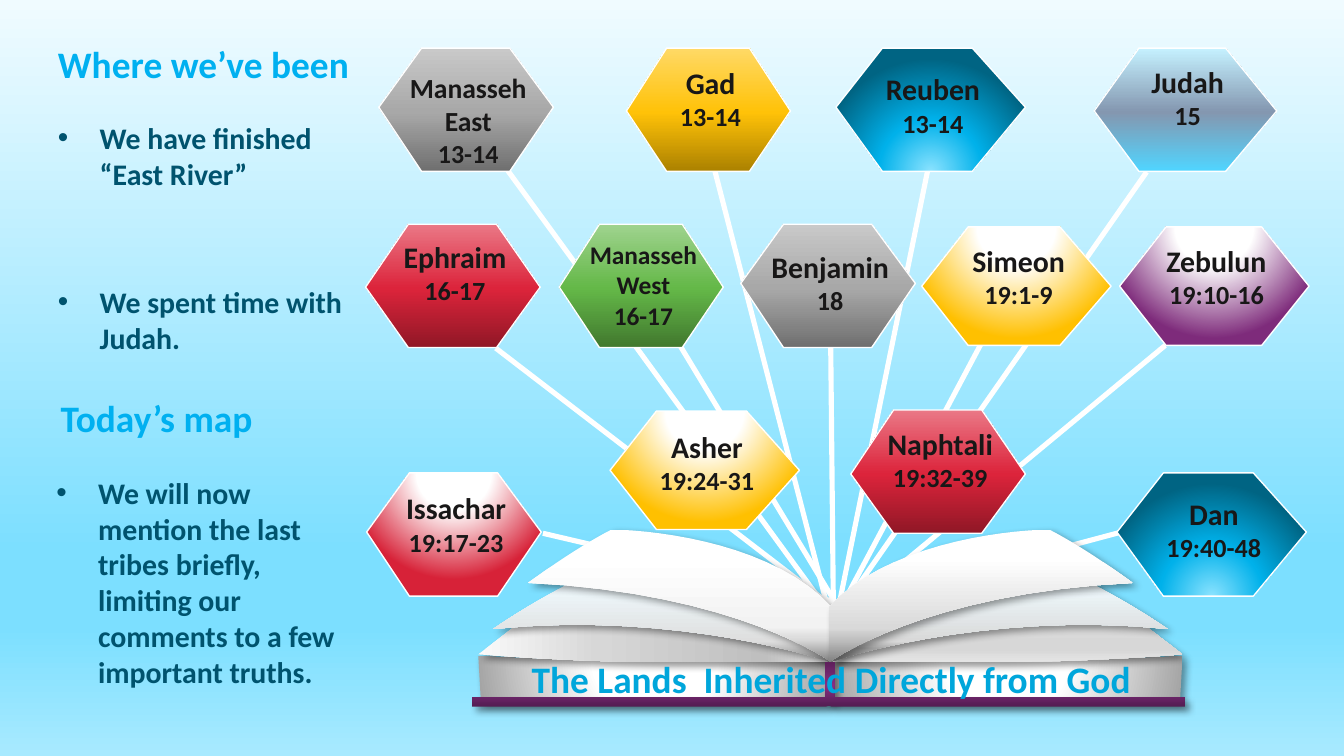
from pptx import Presentation
from pptx.dml.color import RGBColor
from pptx.enum.shapes import MSO_CONNECTOR
from pptx.enum.text import MSO_ANCHOR, MSO_AUTO_SIZE, PP_ALIGN
from pptx.oxml import parse_xml
from pptx.oxml.ns import nsdecls, qn
from pptx.util import Cm, Pt

STRAIGHT = MSO_CONNECTOR.STRAIGHT
TOP, MIDDLE = MSO_ANCHOR.TOP, MSO_ANCHOR.MIDDLE
NO_AUTOFIT = MSO_AUTO_SIZE.NONE
LEFT, CENTER = PP_ALIGN.LEFT, PP_ALIGN.CENTER
color = RGBColor.from_string
FONT = "Calibri"
BOTTOM_GLOW = (50, 130, 50, -30)
TOP_GLOW = (50, -80, 50, 180)

presentation = Presentation()
presentation.slide_width, presentation.slide_height = Cm(25.4), Cm(14.29)
slide = presentation.slides.add_slide(presentation.slide_layouts[4])


def set_gradient(fill, stops, direction):
    """Direction is an angle in degrees or the focus rectangle of a circle."""
    stop_xml = "".join(
        f'<a:gs pos="{position * 1000}"><a:srgbClr val="{value}"/></a:gs>' for position, value in stops)
    if isinstance(direction, tuple):
        sides = " ".join(f'{side}="{value * 1000}"' for side, value in zip("ltrb", direction))
        direction_xml = f'<a:path path="circle"><a:fillToRect {sides}/></a:path>'
    else:
        direction_xml = f'<a:lin ang="{direction * 60000}" scaled="0"/>'
    fill.gradient()
    gradient = fill._xPr.find(qn("a:gradFill"))
    gradient.getparent().replace(gradient, parse_xml(
        f'<a:gradFill {nsdecls("a")} rotWithShape="1"><a:gsLst>{stop_xml}</a:gsLst>'
        f'{direction_xml}</a:gradFill>'))


def add_outline(outline, stops, direction):
    """Outline holds points (x, y) and cubic curves (x1, y1, x2, y2, x, y) in cm."""
    points = [outline[0]]
    for part in outline[1:]:
        if len(part) == 2:
            points.append(part)
            continue
        controls = [points[-1], part[:2], part[2:4], part[4:]]
        for step in range(1, 17):
            t = step / 16
            weights = ((1 - t) ** 3, 3 * t * (1 - t) ** 2, 3 * t * t * (1 - t), t ** 3)
            points.append(tuple(sum(w * c[axis] for w, c in zip(weights, controls)) for axis in (0, 1)))
    points = [(Cm(x), Cm(y)) for x, y in points]
    builder = slide.shapes.build_freeform(*points[0])
    builder.add_line_segments(points[1:], close=True)
    shape = builder.convert_to_shape()
    shape.shadow.inherit = False
    set_gradient(shape.fill, stops, direction)
    return shape


# Background
set_gradient(slide.background.fill,
             [(0, "F0FBFF"), (73, "7CDFFF"), (83, "7CDFFF"), (100, "A8EAFF")], 90)

# Headings and lists: placeholder, text, box, is a list
side_texts = [
    (0, "Where we’ve been", (0.84, 0.64, 6.91, 1.12), False),
    (1, "Today’s map", (0.89, 7.34, 5.03, 1.12), False),
    (2, "We have finished “East River”", (0.84, 2.13, 5.89, 2.79), True),
    (3, "We spent time with Judah.", (0.84, 5.23, 5.89, 3.2), True),
    (4, "We will now mention the last tribes briefly, limiting our comments to a few "
        "important truths.", (0.81, 8.84, 5.89, 3.2), True),
]
for index, text, box, is_list in side_texts:
    shape = slide.placeholders[index]
    shape.left, shape.top, shape.width, shape.height = map(Cm, box)
    frame = shape.text_frame
    frame.text = text
    frame.word_wrap = True
    frame.auto_size = NO_AUTOFIT
    frame.vertical_anchor = TOP if is_list else MIDDLE
    paragraph = frame.paragraphs[0]
    if is_list:
        properties = paragraph._p.get_or_add_pPr()
        properties.set("marL", str(Cm(0.79)))
        properties.set("indent", str(-Cm(0.79)))
        properties.append(parse_xml(f'<a:buFont {nsdecls("a")} typeface="Arial"/>'))
        properties.append(parse_xml(f'<a:buChar {nsdecls("a")} char="•"/>'))
    paragraph.alignment = LEFT
    paragraph.space_before = Pt(0)
    paragraph.line_spacing = 1.0
    font = paragraph.runs[0].font
    font.name, font.size, font.bold = FONT, Pt(16 if is_list else 20), True
    font.color.rgb = color("00536E" if is_list else "00B0F0")

# Rays from the book to the tribes
rays = [
    (15.82, 11.53, 9.37, 6.58), (15.77, 11.71, 18.54, 6.5), (15.75, 11.33, 12.85, 6.53),
    (15.75, 11.53, 15.7, 6.58), (15.7, 11.71, 13.51, 3.23), (15.77, 11.71, 22.02, 6.53),
    (15.77, 11.71, 21.67, 3.25), (15.8, 11.71, 17.53, 3.23), (15.77, 11.71, 9.6, 3.23),
    (15.75, 11.51, 21.18, 10.06), (15.82, 11.38, 10.26, 10.08),
]
for ray in rays:
    connector = slide.shapes.add_connector(STRAIGHT, *map(Cm, ray))
    connector.line.color.rgb = color("FFFFFF")
    connector.line.width = Pt(2.75)
    connector._element.spPr.append(parse_xml(f'<a:effectLst {nsdecls("a")}/>'))

# Tribe hexagons
GOLD = [(0, "AB8100"), (48, "FFC208"), (100, "FFD966")], 270
BLUE = [(0, "8BE3FF"), (46, "00B1EA"), (100, "006483")], BOTTOM_GLOW
GRAY = [(0, "6F6F6F"), (48, "A8A8A8"), (100, "C9C9C9")], 270
SKY = [(0, "50D5FF"), (48, "8497B0"), (100, "C5F1FF")], 270
GREEN = [(0, "41782E"), (48, "64B848"), (100, "9FD38E")], 270
RED = [(0, "901726"), (48, "DC243B"), (100, "EA7886")], 270
WHITE_RED, WHITE_GOLD, WHITE_PURPLE = [
    ([(0, "FFFFFF"), (35, "FFFFFF"), (100, edge)], TOP_GLOW) for edge in ("D72238", "FFC000", "7E2B7B")]

# Lines, left, top, width, height, right shoulder, tip height, text top, gradient, sizes
tribes = [
    ("Gad\n13-14", 11.84, 0.91, 3.1, 2.33, 0.75, 0.51, 1.09, GOLD, (16, 14)),
    ("Reuben\n13-14", 15.8, 0.91, 3.58, 2.33, 0.72, 0.48, 1.22, BLUE, (16, 14)),
    ("Manasseh\nEast\n13-14", 7.16, 0.91, 3.3, 2.33, 0.75, 0.48, 1.22, GRAY, (14.8, 13.9)),
    ("Judah\n15", 20.68, 0.91, 3.45, 2.33, 0.72, 0.51, 1.07, SKY, (16, 14)),
    ("Manasseh\nWest\n16-17", 10.57, 4.24, 3.1, 2.33, 0.75, 0.51, 4.39, GREEN, (13.6, 13.6)),
    ("Ephraim\n16-17", 6.91, 4.24, 3.3, 2.33, 0.75, 0.51, 4.39, RED, (16, 14)),
    ("Benjamin\n18", 14, 4.24, 3.3, 2.33, 0.75, 0.48, 4.57, GRAY, (16, 14)),
    ("Issachar\n19:17-23", 6.93, 8.94, 3.3, 2.33, 0.75, 0.48, 9.14, WHITE_RED, (16, 14)),
    ("Simeon\n19:1-9", 17.42, 4.29, 3.58, 2.24, 0.73, 0.5, 4.47, WHITE_GOLD, (16, 14)),
    ("Zebulun\n19:10-16", 21.16, 4.29, 3.58, 2.24, 0.75, 0.5, 4.47, WHITE_PURPLE, (16, 14)),
    ("Asher\n19:24-31", 11.53, 7.77, 3.58, 2.24, 0.72, 0.5, 7.98, WHITE_GOLD, (16, 14)),
    ("Naphtali\n19:32-39", 16.08, 7.75, 3.3, 2.33, 0.75, 0.52, 7.92, RED, (16, 14)),
    ("Dan\n19:40-48", 21.11, 8.94, 3.58, 2.33, 0.72, 0.48, 9.25, BLUE, (16, 14)),
]
for text, left, top, width, height, shoulder, tip, text_top, gradient, sizes in tribes:
    corners = [(shoulder, 0), (0.245, 0), (0, tip), (0.245, 1), (shoulder, 1), (1, tip)]
    hexagon = add_outline([(left + x * width, top + y * height) for x, y in corners], *gradient)
    hexagon.line.color.rgb = color("FFFFFF")
    hexagon.line.width = Pt(0.75)
    label = slide.shapes.add_textbox(
        Cm(left + 0.07 * width + 0.04), Cm(text_top), Cm(0.86 * width), Cm(2))
    frame = label.text_frame
    frame.word_wrap = True
    frame.text = text
    for paragraph in frame.paragraphs:
        paragraph.alignment = CENTER
        font = paragraph.runs[0].font
        is_last = paragraph._p is frame.paragraphs[-1]._p
        font.name, font.size, font.bold = FONT, Pt(sizes[1] if is_last else sizes[0]), True
        font.color.rgb = color("181717")

# Book: left half, mirrored for the right half, then the cover
block = [(9.04, 12.4), (9.09, 13.28), (15.72, 13.28), (15.72, 12.52),
         (14.66, 12.52, 12.78, 12.52), (10.82, 12.52, 9.04, 12.4)]
block[4:] = [(15.72, 12.52, 14.66, 12.52, 12.78, 12.52), (10.82, 12.52, 9.04, 12.4, 9.04, 12.4)]
lower_page = [(15.72, 12.52), (15.72, 12.52, 14.66, 12.52, 12.78, 12.52),
              (10.82, 12.52, 9.04, 12.37, 9.04, 12.37), (9.6, 11.94), (10.82, 11),
              (10.82, 11, 14.94, 11.07, 15.72, 12.52)]
middle_page = [(9.32, 11.89), (10.11, 11.35, 10.82, 11, 10.82, 11),
               (10.82, 11, 14.94, 11.07, 15.72, 12.52), (15.72, 12.52, 12.88, 11.53, 9.32, 11.89)]
upper_page = [(15.72, 12.52), (15.72, 12.52, 13.94, 11.2, 9.98, 11.02),
              (9.98, 11.02, 10.82, 10.39, 11.56, 10.01), (12.55, 10.03, 14.66, 10.31, 15.72, 11.48)]
leaves = [block, lower_page, middle_page, upper_page]
mirrored = [[tuple(value if i % 2 else 31.39 - value for i, value in enumerate(part))
             for part in leaf] for leaf in leaves]
cover = [(15.77, 13.18), (15.77, 12.52), (15.6, 12.52), (15.6, 13.18), (8.92, 13.18), (8.92, 13.36),
         (15.6, 13.36), (15.67, 13.34), (15.72, 13.36), (22.4, 13.36), (22.4, 13.18)]
EDGE = [(0, "FFFFFF"), (35, "FFFFFF"), (100, "A5A5A5")], TOP_GLOW
book_gradients = [
    EDGE,
    ([(0, "FAFAFA"), (34, "D7D7D7"), (81, "BFBFBF"), (99, "E4E4E4"), (100, "E4E4E4")], 0),
    ([(0, "F0FBFF"), (74, "DEDEDE"), (100, "808080")], 90),
    ([(22, "FFFFFF"), (73, "F2F2F2"), (83, "D9D9D9"), (100, "808080")], 90),
    EDGE,
    ([(0, "FAFAFA"), (74, "D7D7D7"), (83, "D7D7D7"), (100, "E4E4E4")], 90),
    ([(0, "F0FBFF"), (74, "D9D9D9"), (83, "A6A6A6"), (100, "808080")], 90),
    ([(22, "FFFFFF"), (74, "D9D9D9"), (83, "BFBFBF"), (100, "808080")], 90),
    ([(0, "541D52"), (48, "862E82"), (100, "5F205C")], 270),
]
for outline, gradient in zip(leaves + mirrored + [cover], book_gradients):
    shape = add_outline(outline, *gradient)
    shape.line.fill.background()
    shape._element.spPr.find(qn("a:effectLst")).append(parse_xml(
        f'<a:outerShdw {nsdecls("a")} blurRad="{Pt(4)}" dist="{Pt(3)}" dir="2700000" algn="tl" '
        'rotWithShape="0"><a:srgbClr val="000000"><a:alpha val="40000"/></a:srgbClr></a:outerShdw>'))

# Book caption
caption = slide.shapes.add_textbox(Cm(9.02), Cm(12.27), Cm(13.39), Cm(1.32))
caption.text_frame.word_wrap = True
caption.text_frame.text = "The Lands  Inherited Directly from God"
paragraph = caption.text_frame.paragraphs[0]
paragraph.alignment = CENTER
font = paragraph.runs[0].font
font.name, font.size, font.bold = FONT, Pt(20), True
font.color.rgb = color("00A6DB")

presentation.save("out.pptx")
